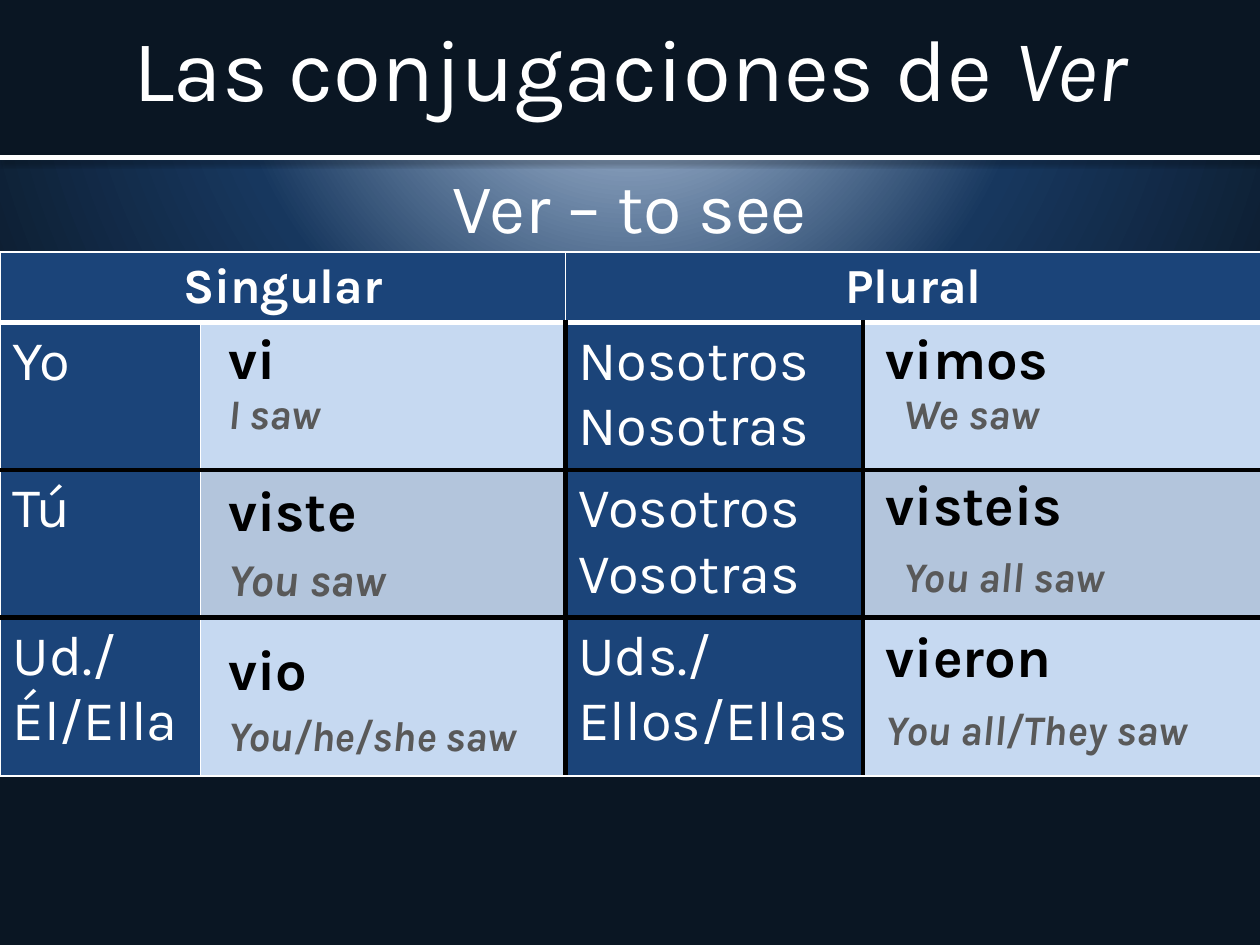
from dataclasses import dataclass

from lxml import etree
from pptx import Presentation
from pptx.dml.color import RGBColor
from pptx.enum.shapes import MSO_CONNECTOR, MSO_SHAPE
from pptx.enum.text import MSO_ANCHOR, PP_ALIGN
from pptx.oxml import parse_xml
from pptx.oxml.ns import nsdecls, qn
from pptx.util import Inches, Pt

CENTER, LEFT = PP_ALIGN.CENTER, PP_ALIGN.LEFT
TOP, MIDDLE = MSO_ANCHOR.TOP, MSO_ANCHOR.MIDDLE
RECT, STRAIGHT = MSO_SHAPE.RECTANGLE, MSO_CONNECTOR.STRAIGHT
NO_STYLE = "{2D5ABB26-0587-4C30-8999-92F81FD0307C}"


@dataclass(frozen=True)
class Theme:
    font: str = "Karla"
    night: str = "0A1623"
    navy: str = "17375E"
    blue: str = "1B4479"
    pale: str = "C6D9F1"
    dusk: str = "B3C5DC"
    white: str = "FFFFFF"
    black: str = "000000"
    grey: str = "595959"
    title: int = 50
    subtitle: int = 40
    pronoun: int = 32
    header: int = 28
    meaning: int = 24


@dataclass(frozen=True)
class Label:
    text: str
    left: float
    top: float
    width: float
    height: float = 0.63
    meaning: bool = False
    size: int = 0


T = Theme()
COLS = [1.59, 2.9, 2.36, 3.16]
ROWS = [0.56, 1.17, 1.17, 1.26]
PRONOUNS = [
    ("Yo", "Nosotros\nNosotras"),
    ("Tú", "Vosotros\nVosotras"),
    ("Ud./Él/Ella", "Uds./Ellos/Ellas"),
]
LABELS = [
    Label("vi", 1.71, 2.55, 2.46),
    Label("viste", 1.71, 3.76, 2.34),
    Label("vio", 1.71, 5.02, 2.46, 0.67),
    Label("vimos", 6.93, 2.55, 2.82, 0.68),
    Label("visteis", 6.93, 3.71, 2.52),
    Label("vieron", 6.93, 4.92, 2.4),
    Label("I saw", 1.71, 3.05, 2.46, 0.5, True),
    Label("You saw", 1.71, 4.35, 2.67, 0.53, True, 26),
    Label("You/he/she saw", 1.71, 5.61, 3, 0.5, True),
    Label("We saw", 7.07, 3.05, 2.46, 0.5, True),
    Label("You all saw", 7.07, 4.35, 2.88, 0.5, True),
    Label("You all/They saw", 6.93, 5.56, 2.93, 0.5, True),
]


def add_run(p, text: str, size: int, color: str = T.white, **style) -> None:
    r = p.add_run()
    r.text = text
    r.font.color.rgb = RGBColor.from_string(color)
    for name, value in {"name": T.font, "size": Pt(size), **style}.items():
        setattr(r.font, name, value)


def write(tf, text: str, size: int, color: str = T.white, align=LEFT, **style) -> None:
    """Write each line of the text as its own paragraph."""
    for i, line in enumerate(text.split("\n")):
        p = tf.add_paragraph() if i else tf.paragraphs[0]
        p.alignment = align
        add_run(p, line, size, color, **style)


def place(sp, left: float, top: float, width: float, height: float) -> None:
    box = {"left": left, "top": top, "width": width, "height": height}
    for name, value in box.items():
        setattr(sp, name, Inches(value))


def paint_background(s) -> None:
    """Fill the slide with a circular gradient centred above its middle."""
    s.background.fill.solid()
    stops = "".join(
        f'<a:gs pos="{pos}000"><a:srgbClr val="{color}"/></a:gs>'
        for pos, color in [(0, T.pale), (52, T.navy), (100, T.night)]
    )
    solid = s.element.find(".//" + qn("a:solidFill"))
    solid.getparent().replace(solid, parse_xml(
        f'<a:gradFill {nsdecls("a")} rotWithShape="1"><a:gsLst>{stops}</a:gsLst>'
        '<a:path path="circle"><a:fillToRect l="50000" t="-80000" r="50000" b="180000"/>'
        "</a:path></a:gradFill>"))


def add_table(s, left: float, top: float, cols: list[float], rows: list[float]):
    """Add a table with no style of its own."""
    frame = s.shapes.add_table(len(rows), len(cols), Inches(left), Inches(top),
                               Inches(sum(cols)), Inches(sum(rows)))
    table = frame.table
    table.first_row = table.horz_banding = False
    frame.element.find(".//" + qn("a:tableStyleId")).text = NO_STYLE
    for col, width in zip(table.columns, cols):
        col.width = Inches(width)
    for row, height in zip(table.rows, rows):
        row.height = Inches(height)
    return table


def set_borders(cell, **edges: tuple[str, int]) -> None:
    tc_pr = cell._tc.get_or_add_tcPr()
    for side, (color, width) in edges.items():
        ln = etree.SubElement(tc_pr, qn(f"a:ln{side}"), w=str(Pt(width)))
        fill = etree.SubElement(ln, qn("a:solidFill"))
        etree.SubElement(fill, qn("a:srgbClr"), val=color)


def row_edge(i: int) -> tuple[str, int]:
    if i in (0, len(ROWS)):
        return T.white, 1
    return (T.white if i == 1 else T.black), 3


def col_edge(row: int, i: int) -> tuple[str, int]:
    return (T.black, 3) if row and i in (2, 3) else (T.white, 1)


def add_conjugation_grid(s) -> None:
    table = add_table(s, 0, 2, COLS, ROWS)
    for r in range(len(ROWS)):
        for c in range(len(COLS)):
            cell = table.cell(r, c)
            set_borders(cell, L=col_edge(r, c), R=col_edge(r, c + 1),
                        T=row_edge(r), B=row_edge(r + 1))
            answer = T.dusk if r == 2 else T.pale
            cell.fill.solid()
            cell.fill.fore_color.rgb = RGBColor.from_string(
                answer if r and c % 2 else T.blue)
    for c, heading in ((0, "Singular"), (2, "Plural")):
        table.cell(0, c).merge(table.cell(0, c + 1))
        write(table.cell(0, c).text_frame, heading, T.header, align=CENTER, bold=True)
    for r, pair in enumerate(PRONOUNS, 1):
        for c, pronoun in zip((0, 2), pair):
            write(table.cell(r, c).text_frame, pronoun, T.pronoun)


def add_label(s, label: Label) -> None:
    cell = add_table(s, label.left, label.top, [label.width], [label.height]).cell(0, 0)
    cell.fill.background()
    size, color = (T.meaning, T.grey) if label.meaning else (T.pronoun, T.black)
    write(cell.text_frame, label.text, label.size or size, color,
          bold=True, italic=label.meaning)


def add_title_band(s) -> None:
    band = s.shapes.add_shape(RECT, 0, 0, Inches(10), Inches(1.25))
    band.shadow.inherit = False
    band.fill.solid()
    band.fill.fore_color.rgb = RGBColor.from_string(T.night)
    band.line.fill.background()
    band.element.getparent().insert(2, band.element)

    rule = s.shapes.add_connector(STRAIGHT, 0, Inches(1.25), Inches(10), Inches(1.25))
    rule.line.color.rgb = RGBColor.from_string(T.white)
    rule.line.width = Pt(3)
    rule.element.spPr.append(parse_xml(
        f'<a:effectLst {nsdecls("a")}><a:outerShdw blurRad="{Pt(3.1)}" dist="{Pt(1.6)}" '
        f'dir="5400000" rotWithShape="0"><a:srgbClr val="{T.black}">'
        '<a:alpha val="38000"/></a:srgbClr></a:outerShdw></a:effectLst>'))


def fill_placeholders(s) -> None:
    title, subtitle = s.shapes.title, s.placeholders[1]
    place(title, 0, 0, 10, 1.06)
    title.text_frame.vertical_anchor = MIDDLE
    write(title.text_frame, "Las conjugaciones de ", T.title, align=CENTER)
    add_run(title.text_frame.paragraphs[0], "Ver", T.title, italic=True)

    place(subtitle, 0, 1.25, 10, 5.2)
    subtitle.text_frame.vertical_anchor = TOP
    write(subtitle.text_frame, "Ver – to see", T.subtitle, align=CENTER)
    subtitle.text_frame.paragraphs[0].space_before = Pt(8)


def main() -> None:
    prs = Presentation()
    prs.slide_width, prs.slide_height = Inches(10), Inches(7.5)
    s = prs.slides.add_slide(prs.slide_layouts[0])
    paint_background(s)
    fill_placeholders(s)
    add_title_band(s)
    add_conjugation_grid(s)
    for label in LABELS:
        add_label(s, label)
    prs.save("out.pptx")


if __name__ == "__main__":
    main()
